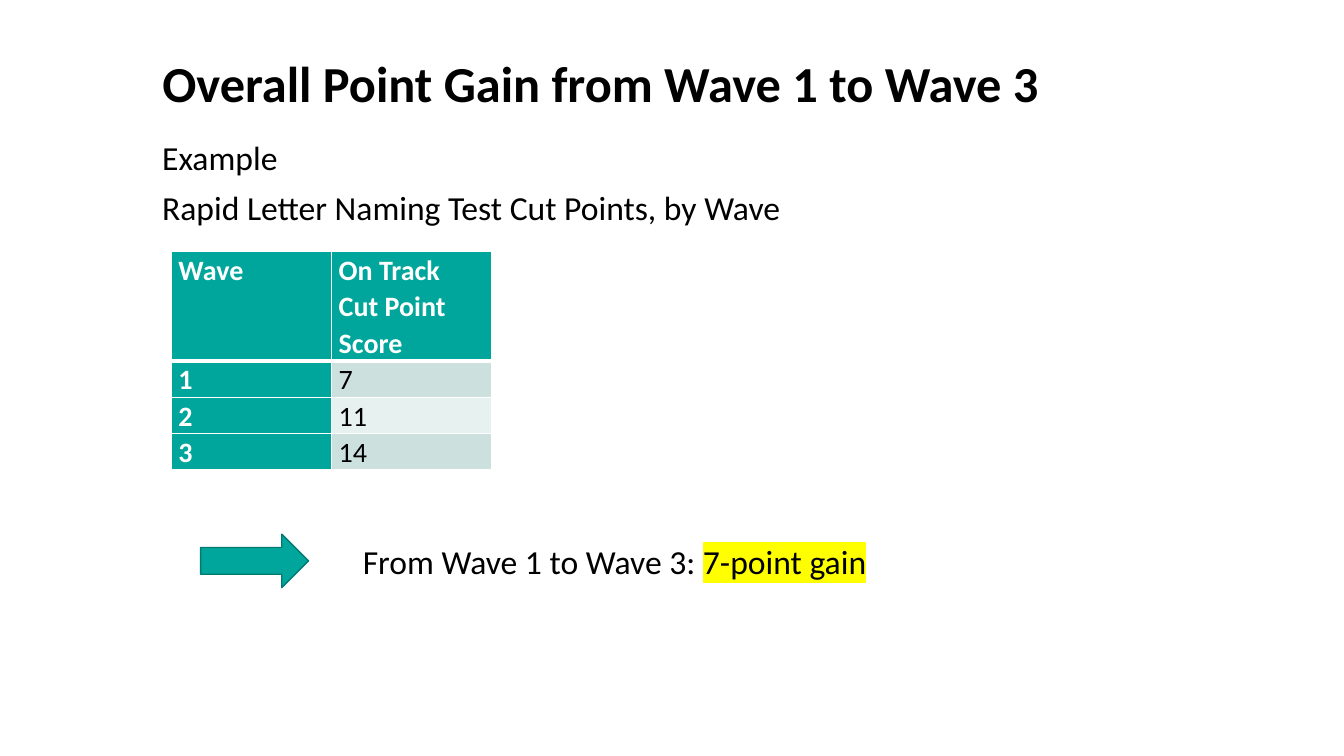
from lxml import etree
from pptx import Presentation
from pptx.dml.color import RGBColor
from pptx.enum.shapes import MSO_SHAPE
from pptx.enum.text import MSO_ANCHOR, MSO_AUTO_SIZE, PP_ALIGN
from pptx.oxml.ns import qn
from pptx.util import Inches, Pt

RIGHT_ARROW = MSO_SHAPE.RIGHT_ARROW
TOP, MIDDLE = MSO_ANCHOR.TOP, MSO_ANCHOR.MIDDLE
NO_AUTOFIT = MSO_AUTO_SIZE.NONE
LEFT = PP_ALIGN.LEFT

BLACK = RGBColor(0x00, 0x00, 0x00)
WHITE = RGBColor(0xFF, 0xFF, 0xFF)
TEAL = RGBColor(0x00, 0xA6, 0x9B)
DARK_TEAL = RGBColor(0x00, 0x7B, 0x73)
BAND_DARK = RGBColor(0xCC, 0xE1, 0xDE)
BAND_LIGHT = RGBColor(0xE7, 0xF1, 0xEF)
YELLOW = RGBColor(0xFF, 0xFF, 0x00)

TITLE_ONLY = 5
CUT_POINTS = [("Wave", "On Track Cut Point Score"), ("1", "7"), ("2", "11"), ("3", "14")]


def add_run(paragraph, text, font="Calibri", size=24, color=BLACK, bold=False, highlight=None):
    """Append formatted text to a paragraph."""
    run = paragraph.add_run()
    run.text = text
    run.font.name = font
    run.font.size = Pt(size)
    run.font.bold = bold
    run.font.color.rgb = color
    if highlight is not None:
        mark = etree.Element(qn("a:highlight"))
        etree.SubElement(mark, qn("a:srgbClr"), val=str(highlight))
        run.font._element.find(qn("a:solidFill")).addnext(mark)


def add_border(cell, side, width, color=WHITE):
    """Draw one side of a table cell; call before filling the cell."""
    properties = cell._tc.get_or_add_tcPr()
    line = etree.SubElement(properties, qn(f"a:ln{side}"), w=str(Pt(width)))
    fill = etree.SubElement(line, qn("a:solidFill"))
    etree.SubElement(fill, qn("a:srgbClr"), val=str(color))


class SlideBuilder:
    def __init__(self, presentation):
        self.slide = presentation.slides.add_slide(presentation.slide_layouts[TITLE_ONLY])
        self.accent = TEAL
        self.bands = (BAND_LIGHT, BAND_DARK)

    def title(self, text, left, top, width, height):
        shape = self.slide.shapes.title
        shape.left, shape.top = Inches(left), Inches(top)
        shape.width, shape.height = Inches(width), Inches(height)
        frame = shape.text_frame
        frame.auto_size = NO_AUTOFIT
        frame.vertical_anchor = MIDDLE
        frame.paragraphs[0].alignment = LEFT
        add_run(frame.paragraphs[0], text, size=36, bold=True)

    def text(self, lines, left, top, width, height, anchor=TOP, spacing=1.0):
        """Each line is a list of (text, highlight) pairs."""
        box = self.slide.shapes.add_textbox(
            Inches(left), Inches(top), Inches(width), Inches(height))
        frame = box.text_frame
        frame.word_wrap = True
        frame.vertical_anchor = anchor
        for index, line in enumerate(lines):
            paragraph = frame.add_paragraph() if index else frame.paragraphs[0]
            paragraph.line_spacing = spacing
            if index:
                paragraph.space_before = Pt(10)
            for text, highlight in line:
                add_run(paragraph, text, highlight=highlight)

    def table(self, rows, left, top, column_width, header_height, row_height):
        columns = len(rows[0])
        height = header_height + row_height * (len(rows) - 1)
        table = self.slide.shapes.add_table(
            len(rows), columns, Inches(left), Inches(top),
            Inches(column_width * columns), Inches(height)).table
        table.first_col = True
        for column in table.columns:
            column.width = Inches(column_width)
        for row_index, values in enumerate(rows):
            table.rows[row_index].height = Inches(row_height if row_index else header_height)
            for column_index, text in enumerate(values):
                self.cell(table.cell(row_index, column_index), text, row_index, column_index)

    def cell(self, cell, text, row_index, column_index):
        heading = row_index == 0 or column_index == 0
        cell.margin_left = cell.margin_right = Inches(0.07)
        cell.margin_top = cell.margin_bottom = 0
        widths = {"L": 1, "R": 1, "T": 3 if row_index == 1 else 1, "B": 1 if row_index else 3}
        for side, width in widths.items():
            add_border(cell, side, width)
        cell.fill.solid()
        cell.fill.fore_color.rgb = self.accent if heading else self.bands[row_index % 2]
        paragraph = cell.text_frame.paragraphs[0]
        paragraph.line_spacing = 1.07
        add_run(paragraph, text, size=20, color=WHITE if heading else BLACK, bold=heading)

    def arrow(self, left, top, width, height):
        shape = self.slide.shapes.add_shape(
            RIGHT_ARROW, Inches(left), Inches(top), Inches(width), Inches(height))
        shape.shadow.inherit = False
        shape.fill.solid()
        shape.fill.fore_color.rgb = self.accent
        shape.line.color.rgb = DARK_TEAL
        shape.line.width = Pt(1)


def main():
    presentation = Presentation()
    presentation.slide_width, presentation.slide_height = Inches(13.33), Inches(7.5)
    builder = SlideBuilder(presentation)

    # Heading and introduction
    builder.title("Overall Point Gain from Wave 1 to Wave 3", 1.51, 0.4, 11.26, 0.84)
    builder.text([[("Example", None)],
                  [("Rapid Letter Naming Test Cut Points, by Wave", None)]],
                 1.51, 1.35, 11.26, 1.0, spacing=0.9)

    # Cut points by wave
    builder.table(CUT_POINTS, 1.7, 2.49, 1.59, header_height=1.09, row_height=0.36)

    # Conclusion
    builder.arrow(1.99, 5.3, 1.07, 0.53)
    builder.text([[("From Wave 1 to Wave 3: ", None), ("7-point gain", YELLOW)]],
                 3.5, 5.3, 9.27, 0.53, anchor=MIDDLE)

    presentation.save("out.pptx")


if __name__ == "__main__":
    main()
